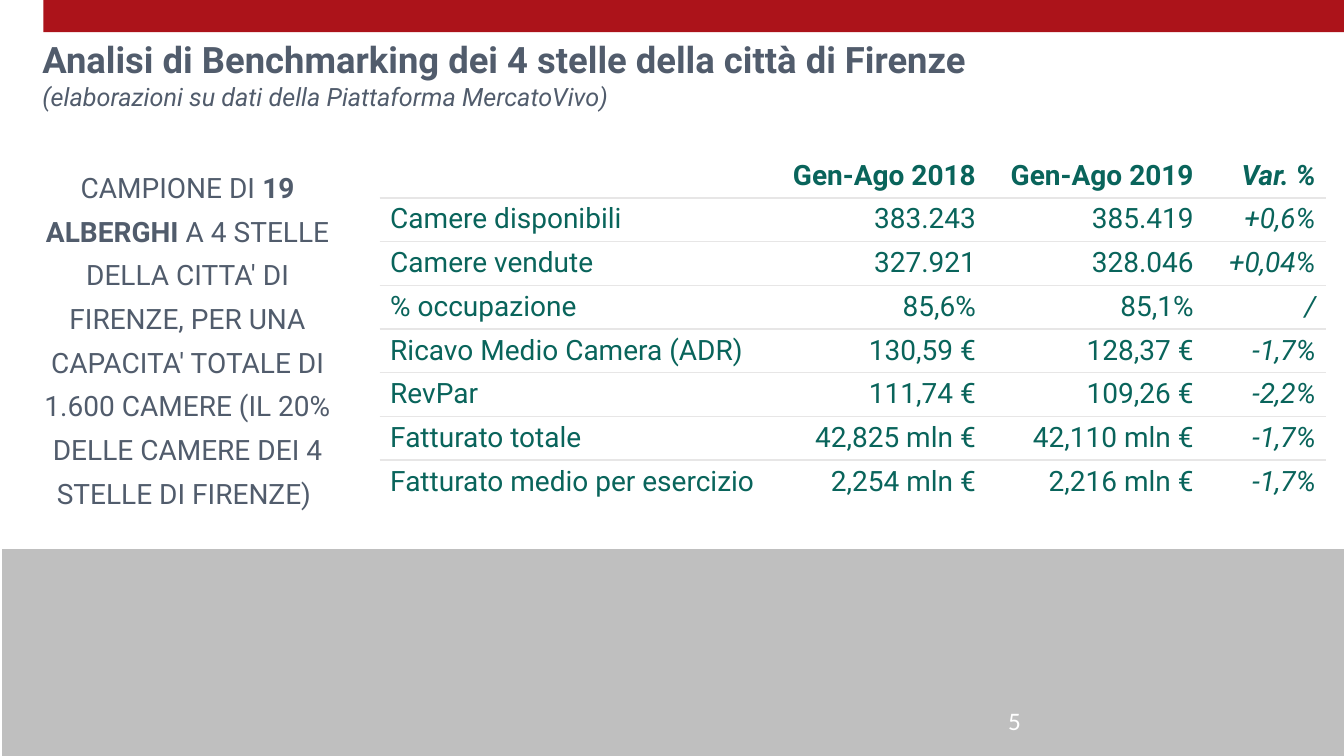
"""Builds the benchmarking slide for the four-star hotels of Florence."""
from dataclasses import dataclass

from lxml.etree import SubElement
from pptx import Presentation
from pptx.dml.color import RGBColor
from pptx.enum.shapes import MSO_SHAPE
from pptx.enum.text import MSO_ANCHOR, MSO_AUTO_SIZE, PP_ALIGN
from pptx.oxml.ns import qn
from pptx.slide import Slide
from pptx.table import Table, _Cell
from pptx.text.text import TextFrame, _Paragraph
from pptx.util import Emu, Pt

EMU_PER_PX = 9144


@dataclass(frozen=True)
class Theme:
    red: str = "AC131A"
    grey: str = "BFBFBF"
    slate: str = "515C6C"
    green: str = "09645B"
    rule: str = "E7E6E6"
    white: str = "FFFFFF"
    font: str = "Roboto"
    number_font: str = "Calibri"
    title_size: int = 26
    body_size: int = 20
    small_size: int = 18


@dataclass(frozen=True)
class Area:
    left: int
    top: int
    width: int
    height: int

    def emu(self) -> tuple[Emu, ...]:
        return tuple(px(n) for n in (self.left, self.top, self.width, self.height))


@dataclass(frozen=True)
class Merge:
    row: int
    column: int
    rows: int
    columns: int


@dataclass(frozen=True)
class Measure:
    label: str
    year_2018: str
    year_2019: str
    change: str

    def texts(self) -> tuple[str, ...]:
        return self.label, self.year_2018, self.year_2019, self.change


THEME = Theme()
TOP_BAND_AREA = Area(43, -3, 1291, 35)
MOSAIC_AREA = Area(2, 545, 1331, 205)
MOSAIC_ROWS, MOSAIC_COLUMNS = 2, 13
MOSAIC_MERGES = (
    *(Merge(0, column, 2, 1) for column in (3, 4, 8, 9, 12)),
    *(Merge(0, column, 1, 2) for column in (6, 10)),
    *(Merge(1, column, 1, 2) for column in (0, 5)),
)
TITLE_AREA = Area(42, 37, 1291, 74)
SAMPLE_AREA = Area(42, 159, 288, 350)
NUMBER_AREA = Area(990, 695, 300, 40)
TABLE_AREA = Area(377, 153, 938, 347)
COLUMN_WIDTHS = (385, 216, 216, 121)
TITLE = "Analisi di Benchmarking dei 4 stelle della città di Firenze"
SUBTITLE = "(elaborazioni su dati della Piattaforma MercatoVivo)"
SAMPLE = (
    ("CAMPIONE DI ", False),
    ("19 ALBERGHI ", True),
    ("A 4 STELLE DELLA CITTA' DI FIRENZE, PER UNA CAPACITA' TOTALE DI "
     "1.600 CAMERE (IL 20% DELLE CAMERE DEI 4 STELLE DI FIRENZE) ", False),
)
MEASURES = (
    Measure("", "Gen-Ago 2018", "Gen-Ago 2019", "Var. %"),
    Measure("Camere disponibili", "383.243", "385.419", "+0,6%"),
    Measure("Camere vendute", "327.921", "328.046", "+0,04%"),
    Measure("% occupazione", "85,6%", "85,1%", "/"),
    Measure("Ricavo Medio Camera (ADR)", "130,59 €", "128,37 €", "-1,7%"),
    Measure("RevPar", "111,74 €", "109,26 €", "-2,2%"),
    Measure("Fatturato totale", "42,825 mln €", "42,110 mln €", "-1,7%"),
    Measure("Fatturato medio per esercizio", "2,254 mln €", "2,216 mln €", "-1,7%"),
)


def px(length: int) -> Emu:
    return Emu(length * EMU_PER_PX)


def style(para: _Paragraph, size: int, color: str, bold: bool | None = False,
          italic: bool = False, align: PP_ALIGN = PP_ALIGN.LEFT,
          font: str = THEME.font) -> None:
    para.alignment = align
    para.font.name = font
    para.font.size = Pt(size)
    para.font.bold = bold
    para.font.italic = italic
    para.font.color.rgb = RGBColor.from_string(color)


def clear_margins(frame: TextFrame) -> None:
    frame.margin_left = frame.margin_right = frame.margin_top = frame.margin_bottom = 0
    frame.word_wrap = True
    frame.auto_size = MSO_AUTO_SIZE.NONE
    frame.vertical_anchor = MSO_ANCHOR.TOP


def add_top_band(page: Slide) -> None:
    band = page.shapes.add_shape(MSO_SHAPE.RECTANGLE, *TOP_BAND_AREA.emu())
    band.shadow.inherit = False
    band.fill.solid()
    band.fill.fore_color.rgb = RGBColor.from_string(THEME.red)
    band.line.fill.background()


def fill_title(page: Slide) -> None:
    title = page.shapes.title
    title.left, title.top, title.width, title.height = TITLE_AREA.emu()
    frame = title.text_frame
    clear_margins(frame)
    heading = frame.paragraphs[0]
    heading.text = TITLE
    style(heading, THEME.title_size, THEME.slate, bold=True)
    source = frame.add_paragraph()
    source.text = SUBTITLE
    style(source, THEME.small_size, THEME.slate, italic=True)


def add_sample(page: Slide) -> None:
    frame = page.shapes.add_textbox(*SAMPLE_AREA.emu()).text_frame
    clear_margins(frame)
    para = frame.paragraphs[0]
    para.line_spacing = 1.3
    style(para, THEME.body_size, THEME.slate, bold=None, align=PP_ALIGN.CENTER)
    for text, bold in SAMPLE:
        span = para.add_run()
        span.text = text
        span.font.bold = bold


def add_page_number(page: Slide) -> None:
    frame = page.shapes.add_textbox(*NUMBER_AREA.emu()).text_frame
    frame.word_wrap = True
    para = frame.paragraphs[0]
    para.text = "5"
    style(para, THEME.small_size, THEME.white, font=THEME.number_font)


def set_borders(cell: _Cell, sides: dict[str, str | None]) -> None:
    properties = cell._tc.get_or_add_tcPr()
    for side, color in sides.items():
        line = SubElement(properties, qn(f"a:ln{side}"), w=str(Pt(1)))
        if color is None:
            SubElement(line, qn("a:noFill"))
        else:
            fill = SubElement(line, qn("a:solidFill"))
            SubElement(fill, qn("a:srgbClr"), val=color)


def add_plain_table(page: Slide, rows: int, columns: int, area: Area) -> Table:
    table = page.shapes.add_table(rows, columns, *area.emu()).table
    table.first_row = table.horz_banding = False
    return table


def add_mosaic(page: Slide) -> None:
    table = add_plain_table(page, MOSAIC_ROWS, MOSAIC_COLUMNS, MOSAIC_AREA)
    for cell in table.iter_cells():
        set_borders(cell, dict.fromkeys("LRTB"))
        cell.fill.solid()
        cell.fill.fore_color.rgb = RGBColor.from_string(THEME.grey)
    for merge in MOSAIC_MERGES:
        end = table.cell(merge.row + merge.rows - 1, merge.column + merge.columns - 1)
        table.cell(merge.row, merge.column).merge(end)


def add_measures(page: Slide) -> None:
    table = add_plain_table(page, len(MEASURES), len(COLUMN_WIDTHS), TABLE_AREA)
    for column, width in zip(table.columns, COLUMN_WIDTHS):
        column.width = px(width)
    last = len(MEASURES) - 1
    for row, measure in enumerate(MEASURES):
        top = THEME.rule if row else THEME.white
        bottom = THEME.rule if row < last else THEME.white
        for column, text in enumerate(measure.texts()):
            cell = table.cell(row, column)
            set_borders(cell, {"L": THEME.white, "R": THEME.white, "T": top, "B": bottom})
            cell.fill.background()
            para = cell.text_frame.paragraphs[0]
            para.text = text
            style(para, THEME.body_size, THEME.green, bold=row == 0, italic=column == 3,
                  align=PP_ALIGN.RIGHT if column else PP_ALIGN.LEFT)


def main() -> None:
    deck = Presentation()
    deck.slide_width, deck.slide_height = px(1333), px(750)
    page = deck.slides.add_slide(deck.slide_layouts[5])
    add_top_band(page)
    add_mosaic(page)
    fill_title(page)
    add_measures(page)
    add_sample(page)
    add_page_number(page)
    deck.save("out.pptx")


if __name__ == "__main__":
    main()
